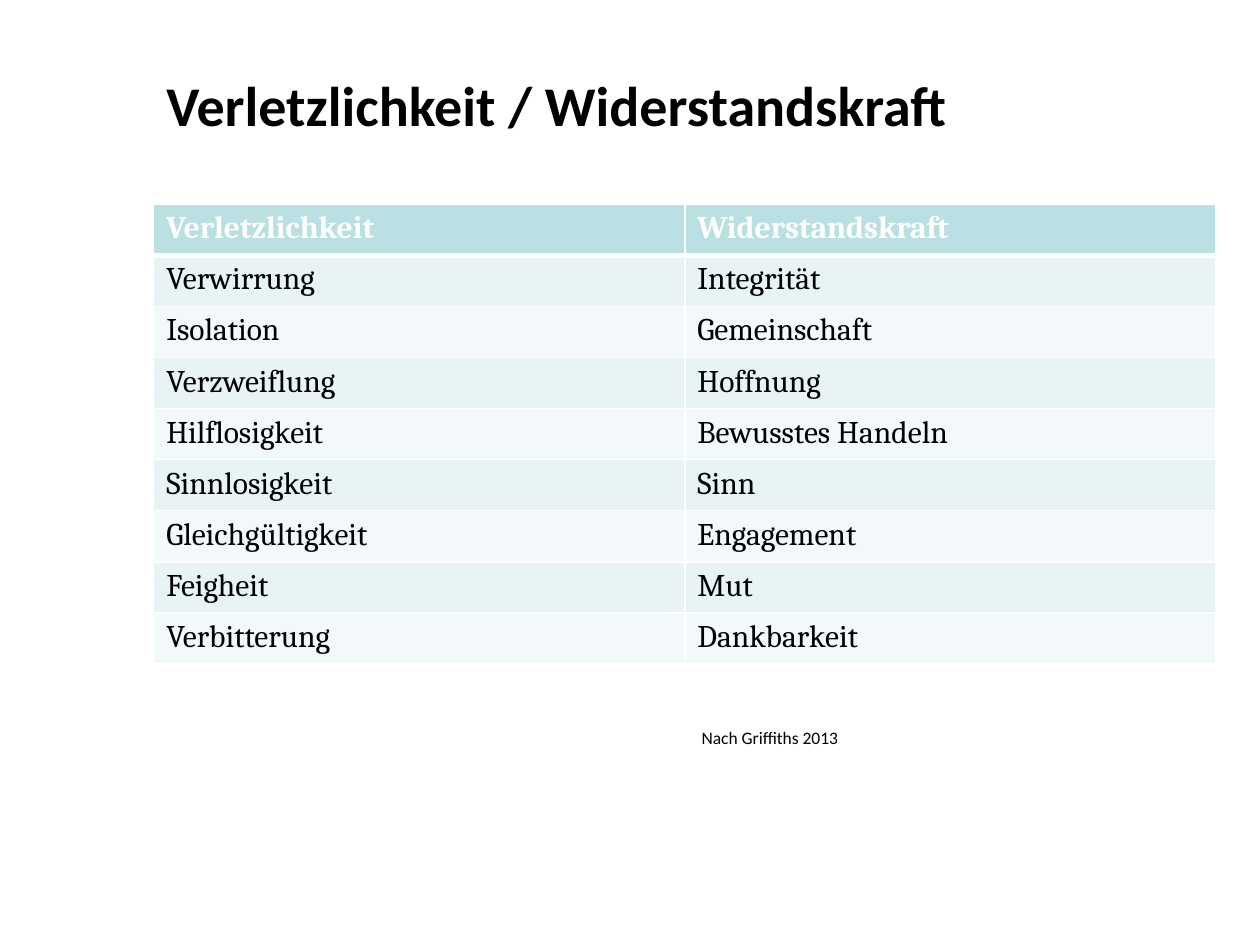
import pptx
import pptx.dml.color
import pptx.enum.text
import pptx.util
from lxml import etree
from pptx.oxml.ns import qn
from pptx.util import Inches

COLORS = {"text": "000000", "white": "FFFFFF", "header": "BBE0E3",
          "odd": "E7F3F4", "even": "F3F9FA"}
ROWS = [
    ("Verletzlichkeit", "Widerstandskraft"),
    ("Verwirrung", "Integrität"),
    ("Isolation", "Gemeinschaft"),
    ("Verzweiflung", "Hoffnung"),
    ("Hilflosigkeit", "Bewusstes Handeln"),
    ("Sinnlosigkeit", "Sinn"),
    ("Gleichgültigkeit", "Engagement"),
    ("Feigheit", "Mut"),
    ("Verbitterung", "Dankbarkeit"),
]


def write(text_frame, text, size, font_name, color="text", bold=False):
    text_frame.text = text
    paragraph = text_frame.paragraphs[0]
    paragraph.alignment = pptx.enum.text.PP_ALIGN.LEFT
    font = paragraph.runs[0].font
    font.size, font.name, font.bold = pptx.util.Pt(size), font_name, bold
    font.color.rgb = pptx.dml.color.RGBColor.from_string(COLORS[color])


def add_border(cell, side, points):
    line = etree.SubElement(cell._tc.get_or_add_tcPr(), qn(f"a:ln{side}"),
                            w=str(pptx.util.Pt(points)))
    fill = etree.SubElement(line, qn("a:solidFill"))
    etree.SubElement(fill, qn("a:srgbClr"), val=COLORS["white"])


presentation = pptx.Presentation()
presentation.slide_width, presentation.slide_height = Inches(10), Inches(7.5)
slide = presentation.slides.add_slide(presentation.slide_layouts[5])

# Title
title = slide.shapes.title
title.left, title.top = Inches(1.22), Inches(0.28)
title.width, title.height = Inches(8.43), Inches(1.1)
title.text_frame.vertical_anchor = pptx.enum.text.MSO_ANCHOR.MIDDLE
write(title.text_frame, "Verletzlichkeit / Widerstandskraft", 32, "Calibri", bold=True)

# Table of opposites
table = slide.shapes.add_table(len(ROWS), 2, Inches(1.22), Inches(1.62),
                               Inches(8.43), Inches(3.65)).table
for row_index, row in enumerate(ROWS):
    is_header = row_index == 0
    fill_name = "header" if is_header else "odd" if row_index % 2 else "even"
    for column_index, text in enumerate(row):
        cell = table.cell(row_index, column_index)
        write(cell.text_frame, text, 18, "Cambria",
              "white" if is_header else "text", is_header)
        for side in "LRTB":
            below_header = (row_index, side) in ((0, "B"), (1, "T"))
            add_border(cell, side, 3 if below_header else 1)
        cell.fill.solid()
        cell.fill.fore_color.rgb = pptx.dml.color.RGBColor.from_string(COLORS[fill_name])

# Credit for the table
credit = slide.shapes.add_textbox(Inches(5.47), Inches(5.72), Inches(4.02), Inches(0.27))
credit.text_frame.word_wrap = True
credit.text_frame.auto_size = pptx.enum.text.MSO_AUTO_SIZE.SHAPE_TO_FIT_TEXT
write(credit.text_frame, "Nach Griffiths 2013", 10, "Calibri")

presentation.save("out.pptx")
